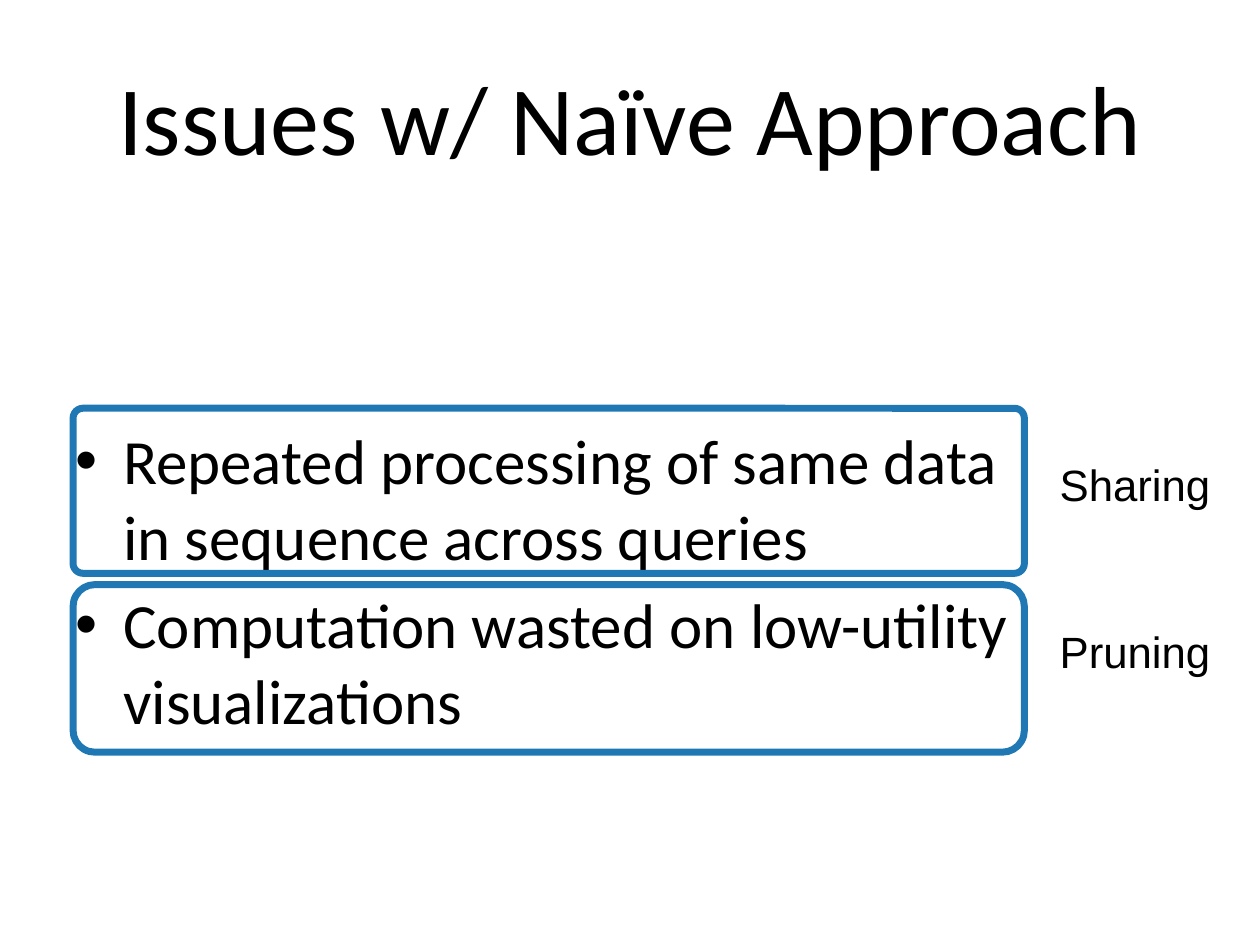
from dataclasses import dataclass

from lxml.etree import SubElement
from pptx import Presentation
from pptx.dml.color import RGBColor
from pptx.enum.shapes import MSO_SHAPE as Shape
from pptx.enum.text import MSO_ANCHOR as Anchor, PP_ALIGN as Align
from pptx.oxml.ns import qn
from pptx.util import Inches, Pt

COLUMNS, ROWS = 100, 75
SLIDE_WIDTH, SLIDE_HEIGHT = Inches(10), Inches(7.5)


@dataclass(frozen=True)
class Theme:
    ink: RGBColor = RGBColor(0, 0, 0)
    paper: RGBColor = RGBColor(255, 255, 255)
    accent: RGBColor = RGBColor(0x1F, 0x78, 0xB4)
    main_font: str = "Calibri"
    label_font: str = "Arial"
    title_size: int = 56
    body_size: int = 36
    label_size: int = 25
    outline: int = 4


THEME = Theme()


def place(box):
    left, top, width, height = box
    column, row = SLIDE_WIDTH / COLUMNS, SLIDE_HEIGHT / ROWS
    return [round(n) for n in (left * column, top * row, width * column, height * row)]


def set_bullet(paragraph, indent):
    properties = paragraph._p.get_or_add_pPr()
    properties.set("marL", str(Inches(indent)))
    properties.set("indent", str(-Inches(indent)))
    SubElement(properties, qn("a:buFont"), typeface="Arial")
    SubElement(properties, qn("a:buChar"), char="•")


def add_text(slide, box, *lines, size, font=THEME.main_font, align=Align.LEFT,
             anchor=Anchor.TOP, wrap=True, inset=(0.1, 0.05), bullet_indent=None):
    frame = slide.shapes.add_textbox(*place(box)).text_frame
    frame.word_wrap = wrap
    frame.vertical_anchor = anchor
    frame.margin_left = frame.margin_right = Inches(inset[0])
    frame.margin_top = frame.margin_bottom = Inches(inset[1])
    for index, line in enumerate(lines):
        paragraph = frame.paragraphs[0] if index == 0 else frame.add_paragraph()
        paragraph.alignment = align
        paragraph.space_before = Pt(size * 0.2 if index else 0)
        if bullet_indent:
            set_bullet(paragraph, bullet_indent)
        run = paragraph.add_run()
        run.text = line
        run.font.name = font
        run.font.size = Pt(size)
        run.font.color.rgb = THEME.ink


def add_title(slide, box, text):
    add_text(slide, box, text, size=THEME.title_size, align=Align.CENTER,
             anchor=Anchor.MIDDLE)


def add_issues(slide, box, issues):
    add_text(slide, box, *issues, size=THEME.body_size, bullet_indent=0.38)


def add_remedy(slide, box, label_top, label, rounding):
    left, _, width, _ = box
    frame = slide.shapes.add_shape(Shape.ROUNDED_RECTANGLE, *place(box))
    frame.adjustments[0] = rounding
    frame.shadow.inherit = False
    frame.fill.background()
    frame.line.color.rgb = THEME.accent
    frame.line.width = Pt(THEME.outline)
    add_text(slide, (left + width + 2.4, label_top, 13, 5), label,
             size=THEME.label_size, font=THEME.label_font,
             anchor=Anchor.MIDDLE, wrap=False, inset=(0.04, 0.04))


def main():
    presentation = Presentation()
    presentation.slide_width, presentation.slide_height = SLIDE_WIDTH, SLIDE_HEIGHT
    slide = presentation.slides.add_slide(presentation.slide_layouts[6])
    slide.background.fill.solid()
    slide.background.fill.fore_color.rgb = THEME.paper

    add_title(slide, (5, 3, 90, 12.5), "Issues w/ Naïve Approach")
    add_issues(slide, (5, 33, 76.3, 34), (
        "Repeated processing of same data in sequence across queries",
        "Computation wasted on low-utility visualizations",
    ))
    remedies = (
        (32.4, 13.1, 35.9, "Sharing", 0.06),
        (46.4, 13.3, 49.2, "Pruning", 0.13),
    )
    for top, height, label_top, label, rounding in remedies:
        add_remedy(slide, (5.8, top, 75.5, height), label_top, label, rounding)

    presentation.save("out.pptx")


if __name__ == "__main__":
    main()
